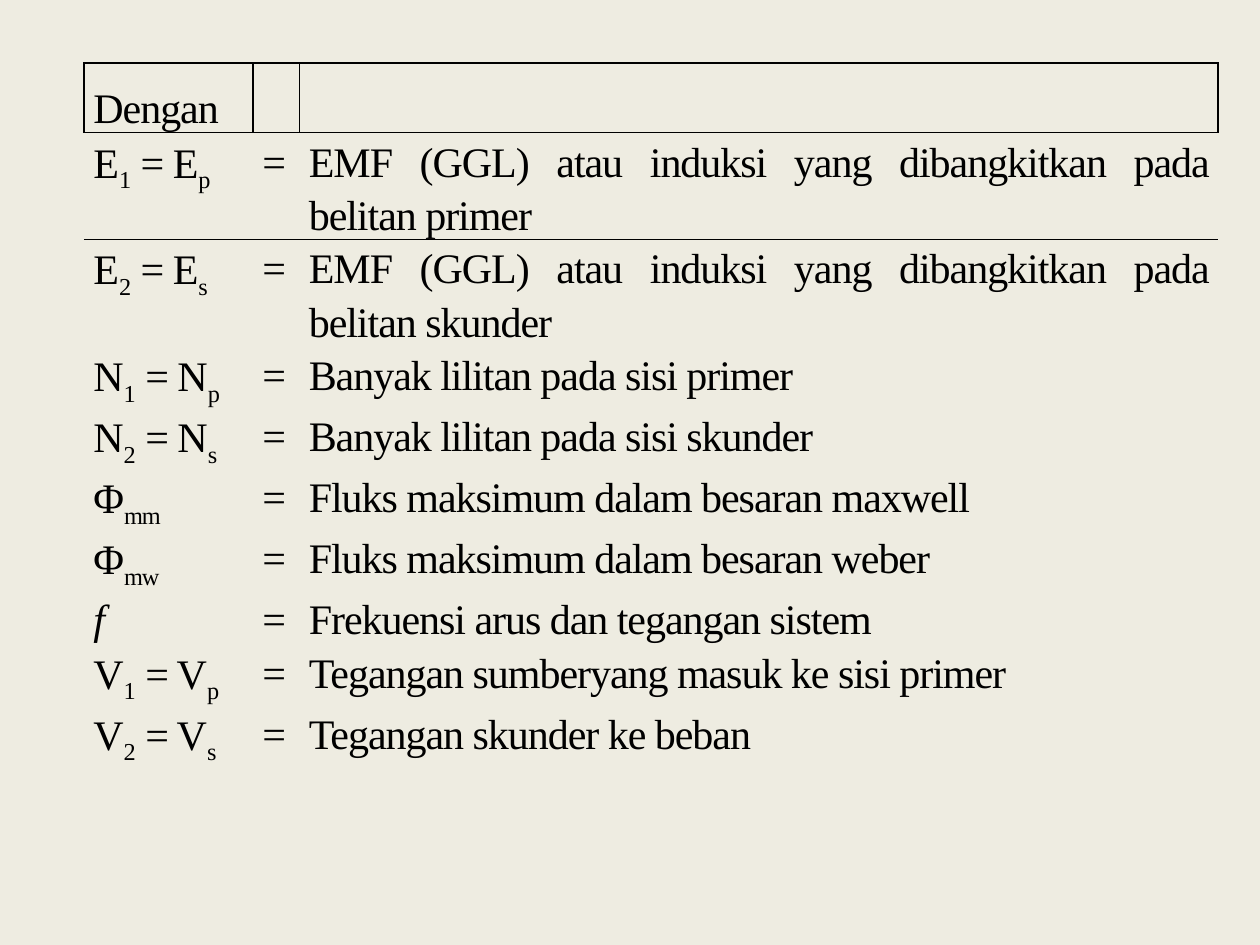
from dataclasses import dataclass

from lxml.etree import SubElement
from pptx import Presentation
from pptx.dml.color import RGBColor
from pptx.enum.text import PP_ALIGN
from pptx.oxml.ns import qn
from pptx.util import Pt


@dataclass(frozen=True)
class Theme:
    background: RGBColor = RGBColor(0xEE, 0xEC, 0xE1)
    ink: RGBColor = RGBColor(0, 0, 0)
    font: str = "Times New Roman"
    size: int = 24
    tracking: str = "-60"
    subscript: str = "-25000"
    border: int = 1
    table_style: str = "{2D5ABB26-0587-4C30-8999-92F81FD0307C}"  # no style, no grid


THEME = Theme()
COLUMN_WIDTHS = (96.5, 26.6, 524.9)
HEADER_HEIGHT = 39.5

# Symbol pieces alternate between normal text and subscript; then meaning, row height
DEFINITIONS = [
    (("E", "1", " = E", "p"), "EMF (GGL) atau induksi yang dibangkitkan pada belitan primer", 60.5),
    (("E", "2", " = E", "s"), "EMF (GGL) atau induksi yang dibangkitkan pada belitan skunder", 60.5),
    (("N", "1", " = N", "p"), "Banyak lilitan pada sisi primer", 34.5),
    (("N", "2", " = N", "s"), "Banyak lilitan pada sisi skunder", 34.5),
    (("Φ", "mm"), "Fluks maksimum dalam besaran maxwell", 34.5),
    (("Φ", "mw"), "Fluks maksimum dalam besaran weber", 34.5),
    (("f",), "Frekuensi arus dan tegangan sistem", 30.5),
    (("V", "1", " = V", "p"), "Tegangan sumberyang masuk ke sisi primer", 34.5),
    (("V", "2", " = V", "s"), "Tegangan skunder ke beban", 34.5),
]


def draw_borders(cell, sides):
    properties = cell._tc.get_or_add_tcPr()
    for side in sides:
        line = SubElement(properties, qn(f"a:ln{side}"), w=str(Pt(THEME.border)))
        fill = SubElement(line, qn("a:solidFill"))
        SubElement(fill, qn("a:srgbClr"), val=str(THEME.ink))


def fill_cell(cell, pieces, line_spacing, borders=""):
    draw_borders(cell, borders)
    cell.fill.background()
    cell.margin_left = cell.margin_right = Pt(5.4)
    cell.margin_top = cell.margin_bottom = Pt(0)
    para = cell.text_frame.paragraphs[0]
    para.alignment = PP_ALIGN.JUSTIFY
    para.line_spacing = line_spacing
    for index, piece in enumerate(pieces):
        span = para.add_run()
        span.text = piece
        span.font.name = THEME.font
        span.font.size = Pt(THEME.size)
        span.font.color.rgb = THEME.ink
        span.font.italic = piece == "f"
        properties = span.font._element
        properties.set("spc", THEME.tracking)
        if index % 2:
            properties.set("baseline", THEME.subscript)


def add_definitions(page, left, top, width, height):
    frame = page.shapes.add_table(len(DEFINITIONS) + 1, len(COLUMN_WIDTHS),
                                  Pt(left), Pt(top), Pt(width), Pt(height))
    table = frame.table
    table.first_row = table.horz_banding = False
    table._tbl.tblPr.find(qn("a:tableStyleId")).text = THEME.table_style
    for column, share in zip(table.columns, COLUMN_WIDTHS):
        column.width = Pt(width * share / sum(COLUMN_WIDTHS))

    # Boxed heading row
    table.rows[0].height = Pt(HEADER_HEIGHT)
    for cell, pieces in zip(table.rows[0].cells, (("Dengan",), (), ())):
        fill_cell(cell, pieces, 1.5, "LRTB")

    # One row for each symbol
    for number, (symbol, meaning, row_height) in enumerate(DEFINITIONS, 1):
        row = table.rows[number]
        row.height = Pt(row_height)
        for cell, pieces in zip(row.cells, (symbol, ("=",), (meaning,))):
            fill_cell(cell, pieces, 1.15, "T" if number == 1 else "")


def main():
    deck = Presentation()
    deck.slide_width, deck.slide_height = Pt(720), Pt(540)
    page = deck.slides.add_slide(deck.slide_layouts[6])
    page.background.fill.solid()
    page.background.fill.fore_color.rgb = THEME.background
    table_height = HEADER_HEIGHT + sum(row[2] for row in DEFINITIONS)
    add_definitions(page, 48, 36, 648, table_height)
    deck.save("out.pptx")


if __name__ == "__main__":
    main()
